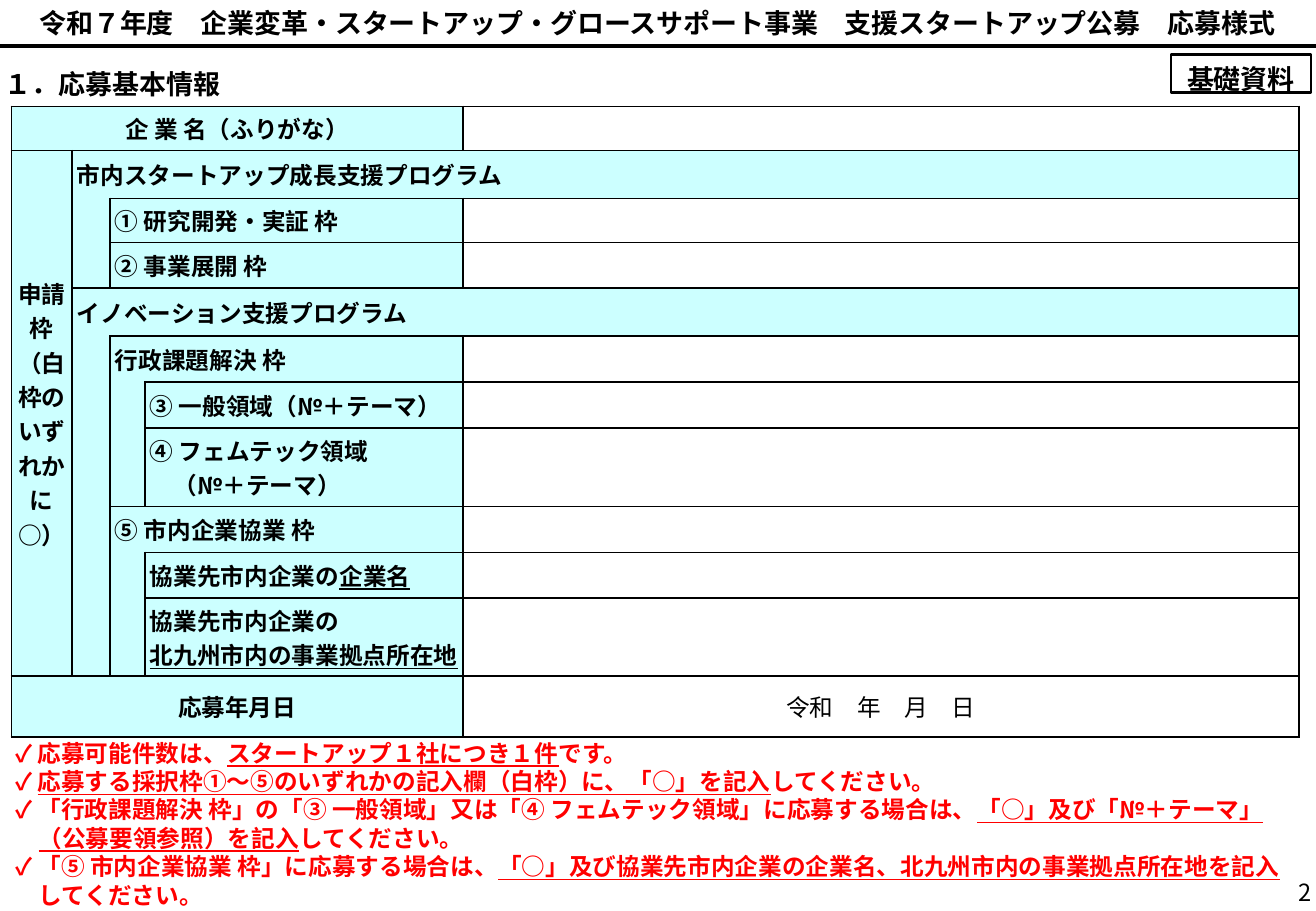
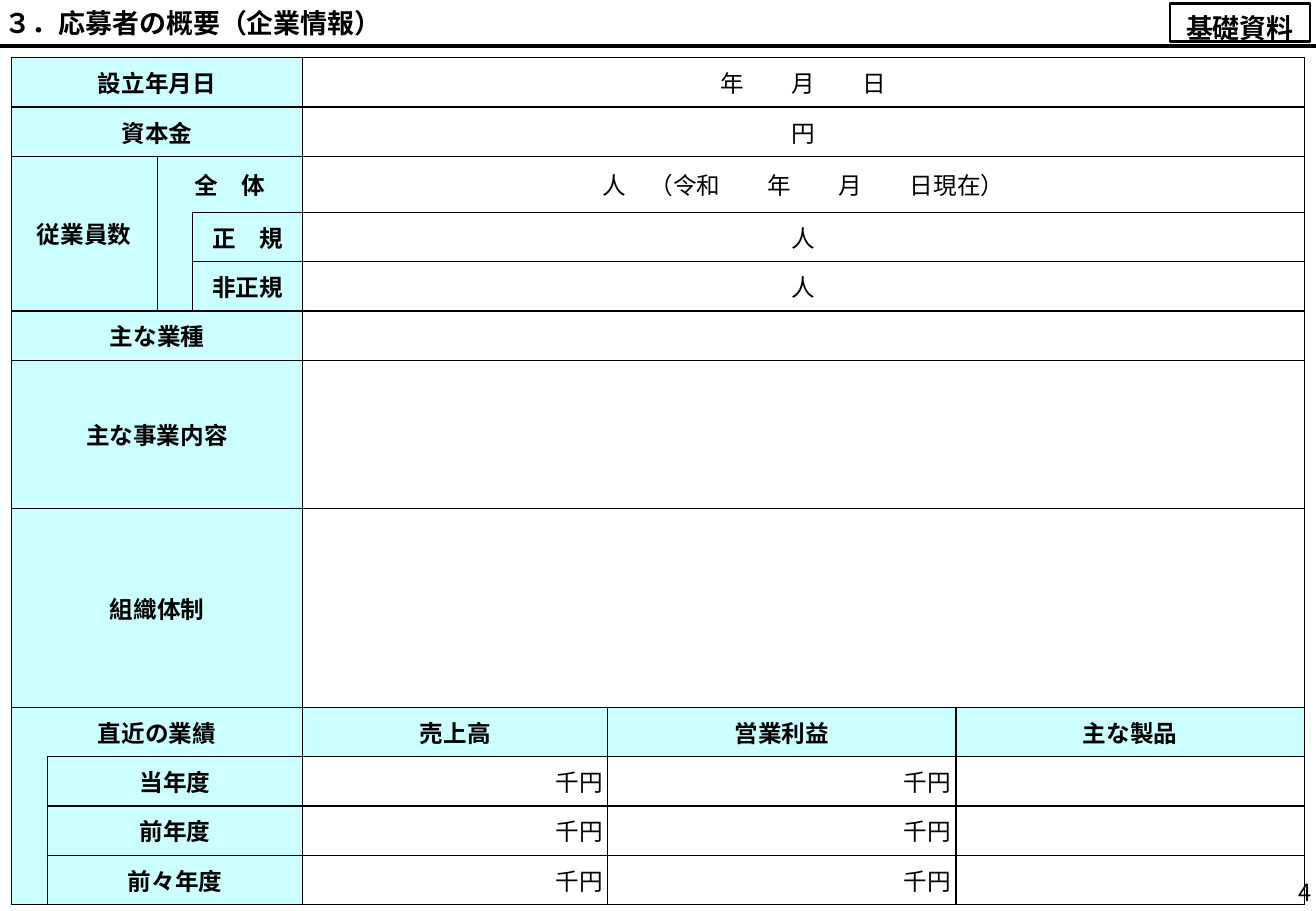
from lxml import etree
from pptx import Presentation
from pptx.dml.color import RGBColor
from pptx.enum.shapes import MSO_CONNECTOR, MSO_SHAPE
from pptx.enum.text import MSO_ANCHOR, PP_ALIGN
from pptx.oxml.ns import qn
from pptx.util import Pt

LEFT, CENTER, RIGHT = PP_ALIGN.LEFT, PP_ALIGN.CENTER, PP_ALIGN.RIGHT
MIDDLE = MSO_ANCHOR.MIDDLE
RECT, STRAIGHT = MSO_SHAPE.RECTANGLE, MSO_CONNECTOR.STRAIGHT

COLORS = {"black": "000000", "red": "FF0000", "label": "CCFFFF"}
FONT = "Noto Sans CJK JP"
WIDTH, HEIGHT = 780, 540
BAND = 27.4
INSET = 2.9
MARGINS = {f"margin_{side}": Pt(INSET) for side in ("left", "top", "right", "bottom")}
HEADING = {"size": Pt(16), "bold": True}
BODY = {"size": Pt(14), "bold": False}
BOLD = {"size": Pt(14), "bold": True}

# Labels: row, column, rows, columns, text, alignment, side without a border
ENTRY_COLS = [36, 22.5, 20.75, 188.5, 495.5]
ENTRY_ROWS = [26.2, 28.4, 26.2, 27, 28.4, 27.3, 27.3, 46.4, 27.3, 27, 46.4, 36]
ENTRY_LABELS = [
    (0, 0, 1, 4, "企 業 名（ふりがな）", CENTER, ""),
    (1, 0, 10, 1, "申請枠（白枠のいずれかに○）", CENTER, ""),
    (1, 1, 1, 4, "市内スタートアップ成長支援プログラム", LEFT, "B"),
    (2, 1, 2, 1, "", LEFT, "T"),
    (2, 2, 1, 2, "① 研究開発・実証 枠", LEFT, ""),
    (3, 2, 1, 2, "② 事業展開 枠", LEFT, ""),
    (4, 1, 1, 4, "イノベーション支援プログラム", LEFT, "B"),
    (5, 1, 6, 1, "", LEFT, "T"),
    (5, 2, 1, 2, "行政課題解決 枠", LEFT, "B"),
    (6, 2, 2, 1, "", LEFT, "T"),
    (6, 3, 1, 1, "③ 一般領域（№＋テーマ）", LEFT, ""),
    (7, 3, 1, 1, "④ フェムテック領域\n　（№＋テーマ）", LEFT, ""),
    (8, 2, 1, 2, "⑤ 市内企業協業 枠", LEFT, "B"),
    (9, 2, 2, 1, "", LEFT, "T"),
    (9, 3, 1, 1, "協業先市内企業の_企業名_", LEFT, ""),
    (10, 3, 1, 1, "協業先市内企業の\n_北九州市内の事業拠点所在地_", LEFT, ""),
    (11, 0, 1, 4, "応募年月日", CENTER, ""),
]
ENTRY_VALUES = [(11, 4, 1, 1, "令和　年　月　日", CENTER, "")]

NOTES = """✓ 応募可能件数は、_スタートアップ１社につき１件_です。
✓ _応募する採択枠①～⑤のいずれかの記入欄（白枠）に、「○」を記入_してください。
✓ 「行政課題解決 枠」の「③ 一般領域」又は「④ フェムテック領域」に応募する場合は、_「○」及び「№＋テーマ」_
　_（公募要領参照）を記入_してください。
✓ 「⑤ 市内企業協業 枠」に応募する場合は、_「○」及び協業先市内企業の企業名、北九州市内の事業拠点所在地を記入_
　してください。"""

COMPANY_COLS = [21.5, 65, 20.75, 65.5, 180.75, 206.5, 206.5]
COMPANY_ROWS = [29.25, 29.25, 33.2] + [29.25] * 3 + [87.8, 118] + [29.25] * 4
COMPANY_LABELS = [
    (0, 0, 1, 4, "設立年月日", CENTER, ""),
    (1, 0, 1, 4, "資本金", CENTER, ""),
    (2, 0, 3, 2, "従業員数", CENTER, ""),
    (2, 2, 1, 2, "全　体", CENTER, "B"),
    (3, 2, 2, 1, "", CENTER, "T"),
    (3, 3, 1, 1, "正　規", CENTER, ""),
    (4, 3, 1, 1, "非正規", CENTER, ""),
    (5, 0, 1, 4, "主な業種", CENTER, ""),
    (6, 0, 1, 4, "主な事業内容", CENTER, ""),
    (7, 0, 1, 4, "組織体制", CENTER, ""),
    (8, 0, 1, 4, "直近の業績", CENTER, "B"),
    (8, 4, 1, 1, "売上高", CENTER, ""),
    (8, 5, 1, 1, "営業利益", CENTER, ""),
    (8, 6, 1, 1, "主な製品", CENTER, ""),
    (9, 0, 3, 1, "", CENTER, "T"),
] + [(row, 1, 1, 3, year, CENTER, "")
     for row, year in enumerate(("当年度", "前年度", "前々年度"), 9)]
COMPANY_VALUES = [
    (row, 4, 1, 3, text, CENTER, "")
    for row, text in enumerate(("年　　月　　日", "円", "人　（令和　　年　　月　　日現在）",
                                "人", "人", "", "", ""))
] + [(row, col, 1, 1, "千円", RIGHT, "") for row in (9, 10, 11) for col in (4, 5)]


def rgb(name):
    return RGBColor.from_string(COLORS[name])


def set_all(obj, values):
    for name, value in values.items():
        setattr(obj, name, value)


def write(tf, text, style, align=LEFT, color="black", spacing=None):
    """Fill a text frame: one paragraph a line, underlined between underscores."""
    for i, line in enumerate(text.split("\n")):
        p = tf.add_paragraph() if i else tf.paragraphs[0]
        set_all(p, {"alignment": align, "line_spacing": spacing})
        if not line:
            p._p.get_or_add_endParaRPr().set("sz", str(int(style["size"].pt * 100)))
        for j, part in enumerate(line.split("_")):
            if part:
                r = p.add_run()
                r.text = part
                set_all(r.font, {**style, "name": FONT, "underline": j % 2 == 1})
                r.font.color.rgb = rgb(color)
                etree.SubElement(r._r.get_or_add_rPr(), qn("a:ea"), typeface=FONT)


def add_text(slide, box, text, style, **options):
    sp = slide.shapes.add_textbox(*map(Pt, box))
    tf = sp.text_frame
    set_all(tf, {**MARGINS, "word_wrap": True, "vertical_anchor": MIDDLE})
    write(tf, text, style, **options)


def add_rule(slide):
    line = slide.shapes.add_connector(STRAIGHT, 0, Pt(BAND), Pt(WIDTH), Pt(BAND))
    line.line.width = Pt(2)
    line.line.color.rgb = rgb("black")
    etree.SubElement(line._element.spPr, qn("a:effectLst"))


def add_tag(slide, left, top):
    sp = slide.shapes.add_shape(RECT, *map(Pt, (left, top, 83, 22.3)))
    sp.shadow.inherit = False
    sp.fill.background()
    sp.line.width = Pt(1.5)
    sp.line.color.rgb = rgb("black")
    tf = sp.text_frame
    set_all(tf, {**MARGINS, "margin_top": Pt(8.6), "word_wrap": True,
                 "vertical_anchor": MIDDLE})
    write(tf, "基礎資料", HEADING, CENTER)


def set_borders(cell, open_side):
    tcPr = cell._tc.get_or_add_tcPr()
    for side in "LRTB":
        ln = etree.SubElement(tcPr, qn(f"a:ln{side}"), w=str(Pt(1)))
        if side == open_side:
            etree.SubElement(ln, qn("a:noFill"))
        else:
            fill = etree.SubElement(ln, qn("a:solidFill"))
            etree.SubElement(fill, qn("a:srgbClr"), val=COLORS["black"])


def add_form(slide, top, cols, rows, labels, values):
    """Add a form table; cells that no entry covers stay white and empty."""
    frame = slide.shapes.add_table(len(rows), len(cols), Pt(6.75), Pt(top),
                                   Pt(sum(cols)), Pt(sum(rows)))
    table = frame.table
    set_all(table, {"first_row": False, "horz_banding": False})
    for col, width in zip(table.columns, cols):
        col.width = Pt(width)
    for row, height in zip(table.rows, rows):
        row.height = Pt(height)

    owners = {}
    for entries, is_label in ((labels, True), (values, False)):
        for entry in entries:
            row, col, n_rows, n_cols = entry[:4]
            for r in range(row, row + n_rows):
                for c in range(col, col + n_cols):
                    owners[r, c] = entry, is_label

    for r in range(len(rows)):
        for c in range(len(cols)):
            blank = (r, c, 1, 1, "", LEFT, ""), False
            entry, is_label = owners.get((r, c), blank)
            row, col, n_rows, n_cols, text, align, open_side = entry
            cell = table.cell(r, c)
            set_all(cell, {**MARGINS, "vertical_anchor": MIDDLE})
            set_borders(cell, open_side)
            if is_label:
                cell.fill.solid()
                cell.fill.fore_color.rgb = rgb("label")
            else:
                cell.fill.background()
            is_origin = (r, c) == (row, col)
            write(cell.text_frame, text if is_origin else "",
                  BOLD if is_label else BODY, align)
            if is_origin and n_rows * n_cols > 1:
                cell.merge(table.cell(r + n_rows - 1, c + n_cols - 1))
    return table


def add_page(prs, title, align, number):
    slide = prs.slides.add_slide(prs.slide_layouts[6])
    add_text(slide, (709, 517, 71, 23), number, BODY, align=RIGHT)
    add_text(slide, (0, 0, WIDTH, BAND), title, HEADING, align=align)
    add_rule(slide)
    return slide


def add_entry_slide(prs):
    slide = add_page(prs, "令和７年度　企業変革・スタートアップ・グロースサポート事業　"
                     "支援スタートアップ公募　応募様式", CENTER, "2")
    add_text(slide, (0, 36, 228, BAND), "１．応募基本情報", HEADING)
    table = add_form(slide, 63, ENTRY_COLS, ENTRY_ROWS, ENTRY_LABELS, ENTRY_VALUES)
    table.cell(1, 0)._tc.get_or_add_tcPr().set("vert", "eaVert")
    add_text(slide, (6, 436.5, 774, 103.5), NOTES, BOLD, color="red", spacing=Pt(16.8))
    add_tag(slide, 694, 32.4)


def add_company_slide(prs):
    slide = add_page(prs, "３．応募者の概要（企業情報）", LEFT, "4")
    add_form(slide, 34.2, COMPANY_COLS, COMPANY_ROWS, COMPANY_LABELS, COMPANY_VALUES)
    add_tag(slide, 693.4, 2.2)


def main():
    prs = Presentation()
    set_all(prs, {"slide_width": Pt(WIDTH), "slide_height": Pt(HEIGHT)})
    add_entry_slide(prs)
    add_company_slide(prs)
    prs.save("out.pptx")


if __name__ == "__main__":
    main()
